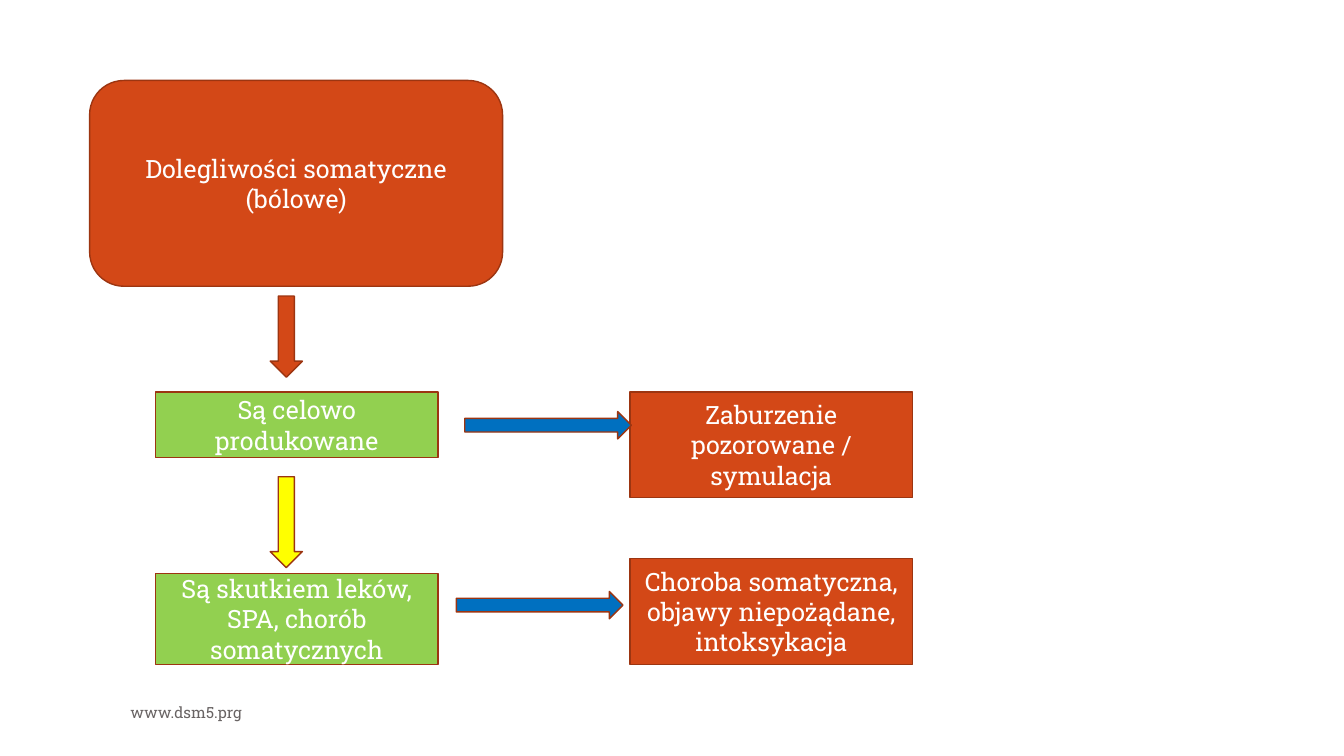
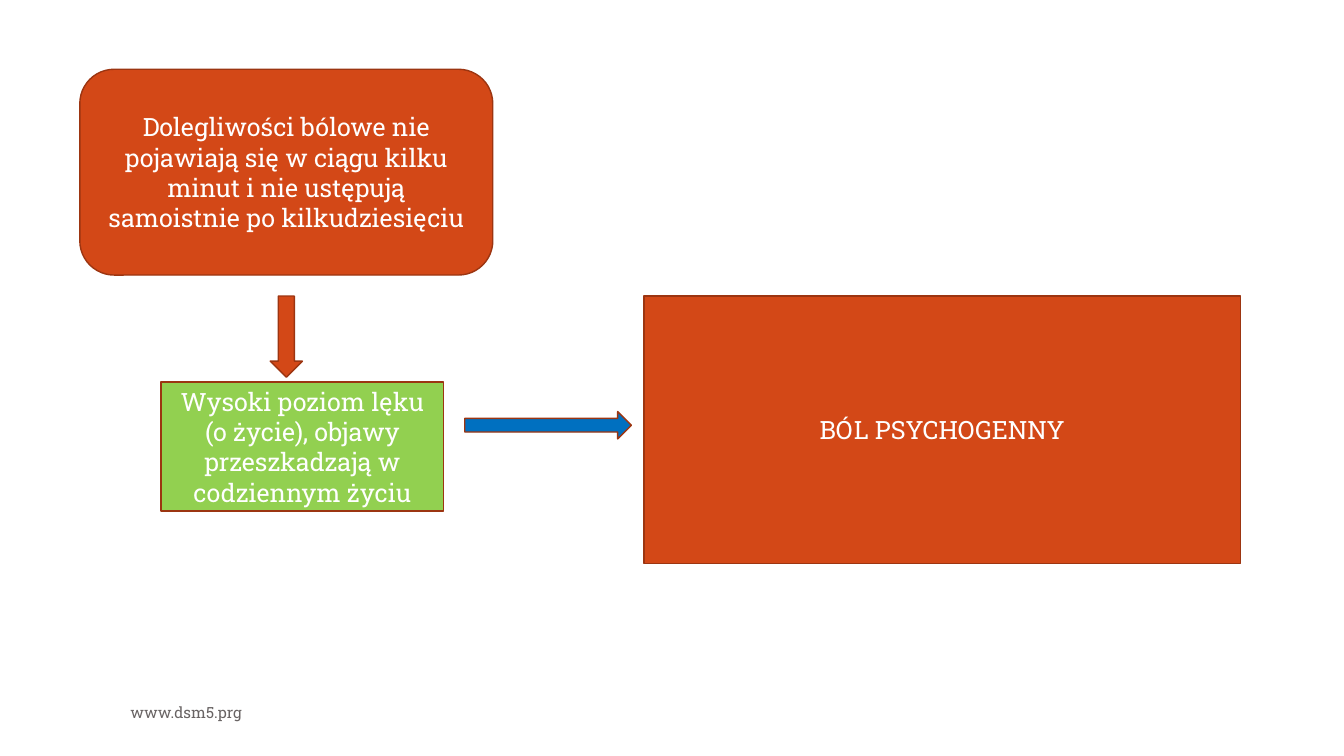
import collections

import pptx
import pptx.dml.color
import pptx.enum.shapes
import pptx.enum.text
import pptx.util

Pt = pptx.util.Pt
PRESET = pptx.enum.shapes.MSO_SHAPE
ALIGN = pptx.enum.text.PP_ALIGN
ANCHOR = pptx.enum.text.MSO_ANCHOR

COLORS = {
    "orange": "D34817",
    "outline": "9C3511",
    "green": "92D050",
    "yellow": "FFFF00",
    "blue": "0070C0",
    "white": "FFFFFF",
    "gray": "696464",
}
FONT = "Roboto Slab"
ARROW_LENGTH, ARROW_HEIGHT = 119, 19.5
CAUSE_WIDTH = 202

# Lengths are in points; a Part is a box relative to its row, with its text
Box = collections.namedtuple("Box", "left top width height")
Part = collections.namedtuple("Part", "text box")


def color(name):
    return pptx.dml.color.RGBColor.from_string(COLORS[name])


def inside(outer, inner):
    return Box(outer.left + inner.left, outer.top + inner.top, inner.width, inner.height)


def write(shape, text, size, color_name, alignment):
    frame = shape.text_frame
    frame.word_wrap = True
    frame.vertical_anchor = ANCHOR.MIDDLE
    paragraph = frame.paragraphs[0]
    paragraph.alignment = alignment
    run = paragraph.add_run()
    run.text = text
    run.font.name = FONT
    run.font.size = Pt(size)
    run.font.color.rgb = color(color_name)


def add_block(slide, preset, box, fill, text=None):
    shape = slide.shapes.add_shape(preset, *map(Pt, box))
    shape.shadow.inherit = False
    shape.fill.solid()
    shape.fill.fore_color.rgb = color(fill)
    shape.line.color.rgb = color("outline")
    shape.line.width = Pt(1)
    if text:
        write(shape, text, 18, "white", ALIGN.CENTER)


def add_symptom(slide, box, text):
    """Rounded starting box of the diagram."""
    add_block(slide, PRESET.ROUNDED_RECTANGLE, box, "orange", text)


def add_down_arrow(slide, box, fill):
    add_block(slide, PRESET.DOWN_ARROW, box, fill)


def add_decision_row(slide, row, cause, arrow_left, arrow_top, outcome):
    """Green cause, blue arrow and orange outcome, all relative to the row."""
    arrow = Box(arrow_left, arrow_top, ARROW_LENGTH, ARROW_HEIGHT)
    add_block(slide, PRESET.RECTANGLE, inside(row, cause.box), "green", cause.text)
    add_block(slide, PRESET.RECTANGLE, inside(row, outcome.box), "orange", outcome.text)
    add_block(slide, PRESET.RIGHT_ARROW, inside(row, arrow), "blue")


def add_footer(slide, box):
    footer = slide.shapes.add_textbox(*map(Pt, box))
    write(footer, "www.dsm5.prg", 11, "gray", ALIGN.LEFT)


def add_diagram_slide(presentation, symptom_box, symptom_text):
    """Parts found on every slide: symptom, first arrow and footer."""
    slide = presentation.slides.add_slide(presentation.slide_layouts[6])
    add_symptom(slide, symptom_box, symptom_text)
    add_down_arrow(slide, Box(193, 211.5, 23, 58), "orange")
    add_footer(slide, Box(86, 494, 498, 29))
    return slide


def build_somatic_slide(presentation):
    slide = add_diagram_slide(
        presentation, Box(64, 57.5, 295, 147), "Dolegliwości somatyczne (bólowe)")
    # Deliberately produced symptoms
    add_decision_row(
        slide, Box(111, 280, 541, 75.5),
        Part("Są celowo produkowane", Box(0, 0, CAUSE_WIDTH, 47)),
        221, 14,
        Part("Zaburzenie pozorowane / symulacja", Box(339, 0, 202, 75.5)))
    add_down_arrow(slide, Box(193, 340.5, 23, 65), "yellow")
    # Symptoms with a physical cause
    add_decision_row(
        slide, Box(111, 399, 541, 75.5),
        Part("Są skutkiem leków, SPA, chorób somatycznych",
             Box(0, 10.5, CAUSE_WIDTH, 65)),
        215, 23.5,
        Part("Choroba somatyczna, objawy niepożądane, intoksykacja",
             Box(339, 0, 202, 75.5)))


def build_psychogenic_slide(presentation):
    slide = add_diagram_slide(
        presentation, Box(57, 49.5, 295, 147),
        "Dolegliwości bólowe nie pojawiają się w ciągu kilku minut "
        "i nie ustępują samoistnie po kilkudziesięciu")
    add_decision_row(
        slide, Box(115, 211.5, 771, 191),
        Part("Wysoki poziom lęku (o życie), objawy przeszkadzają w codziennym życiu",
             Box(0, 61.5, CAUSE_WIDTH, 92)),
        217, 82.5,
        Part("BÓL PSYCHOGENNY", Box(345, 0, 426, 191)))


def main():
    presentation = pptx.Presentation()
    presentation.slide_width = Pt(960)
    presentation.slide_height = Pt(540)
    build_somatic_slide(presentation)
    build_psychogenic_slide(presentation)
    presentation.save("out.pptx")


if __name__ == "__main__":
    main()
